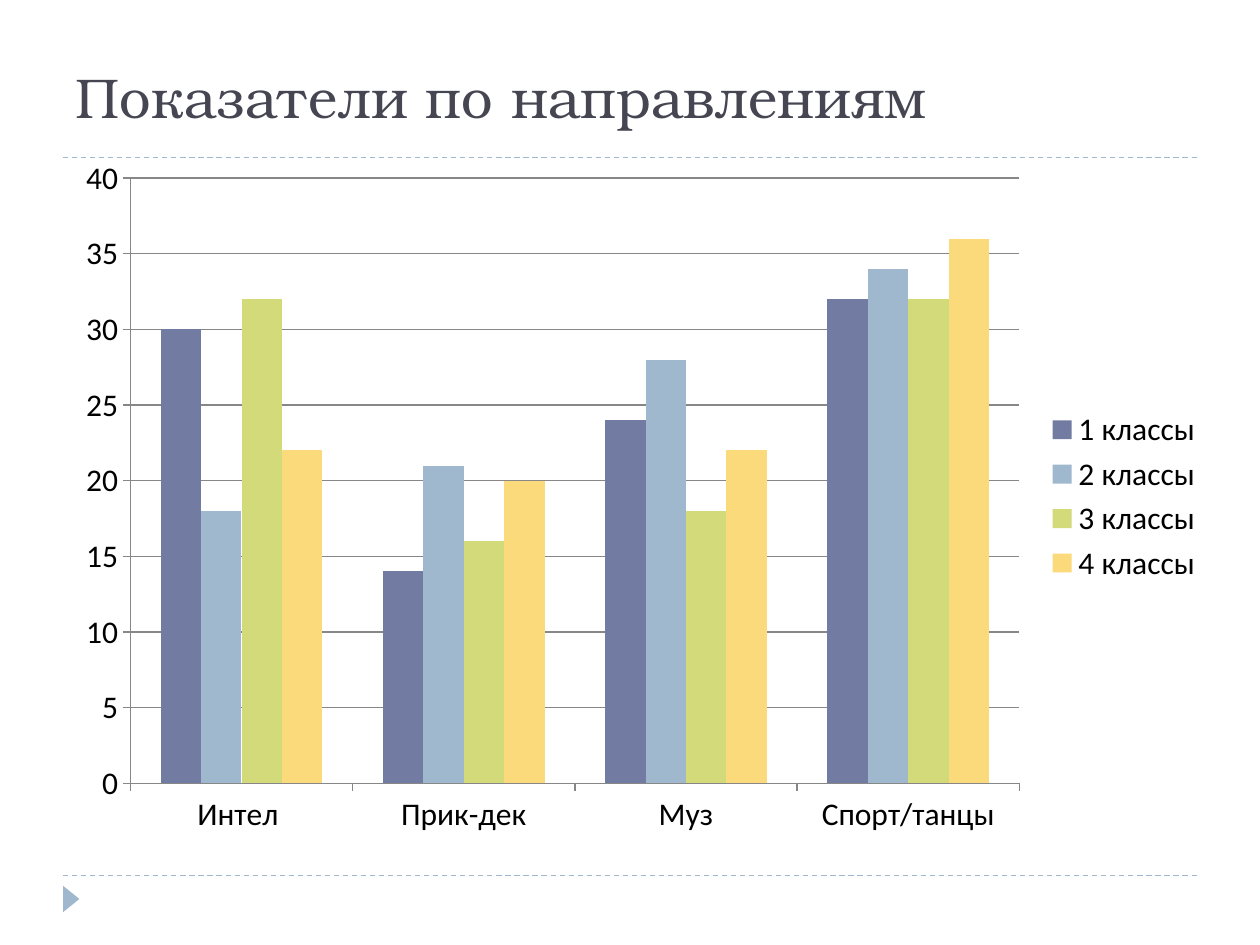
from dataclasses import dataclass

from lxml import etree
from pptx import Presentation
from pptx.chart.data import CategoryChartData
from pptx.dml.color import RGBColor
from pptx.enum import chart as ch, dml, shapes, text
from pptx.oxml.ns import qn
from pptx.slide import Slide
from pptx.util import Inches, Pt


@dataclass(frozen=True)
class Theme:
    ink: str = "464653"
    black: str = "000000"
    sky: str = "9FB8CD"
    grid: str = "878787"
    head: str = "TeX Gyre Bonum"
    body: str = "Calibri"
    big: int = 32
    base: int = 18
    thin: float = 0.75


@dataclass(frozen=True)
class Series:
    name: str
    color: str
    vals: tuple[int, ...]


@dataclass(frozen=True)
class Box:
    left: float
    top: float
    width: float
    height: float

    def place(self) -> list[int]:
        return [Inches(v) for v in (self.left, self.top, self.width, self.height)]


THEME = Theme()
CATS = ("Интел ", "Прик-дек", "Муз", "Спорт/танцы")
SERIES = (
    Series("1 классы", "727CA3", (30, 14, 24, 32)),
    Series("2 классы", THEME.sky, (18, 21, 28, 34)),
    Series("3 классы", "D2DA7A", (32, 16, 18, 32)),
    Series("4 классы", "FADA7A", (22, 20, 22, 36)),
)
RULES = (1.25, 6.95)


def style(font, name: str, size: int, color: str) -> None:
    for key, val in {"name": name, "size": Pt(size), "bold": False}.items():
        setattr(font, key, val)
    font.color.rgb = RGBColor.from_string(color)


def stroke(line, color: str) -> None:
    line.color.rgb = RGBColor.from_string(color)
    line.width = Pt(THEME.thin)


def paint(fill, color: str) -> None:
    fill.solid()
    fill.fore_color.rgb = RGBColor.from_string(color)


def rule(slide: Slide, y: float) -> None:
    """Draw a dashed line between the slide margins."""
    line = slide.shapes.add_connector(
        shapes.MSO_CONNECTOR.STRAIGHT, Inches(0.5), Inches(y), Inches(9.5), Inches(y))
    stroke(line.line, THEME.sky)
    line.line.dash_style = dml.MSO_LINE.DASH
    etree.SubElement(line._element.spPr, qn("a:effectLst"))


def marker(slide: Slide, box: Box) -> None:
    """Draw the small footer triangle that points right."""
    mark = slide.shapes.add_shape(
        shapes.MSO_SHAPE.ISOSCELES_TRIANGLE, *box.place())
    mark.rotation = 90
    mark.shadow.inherit = False
    paint(mark.fill, THEME.sky)
    mark.line.fill.background()


def title(slide: Slide, words: str, box: Box) -> None:
    frame = slide.shapes.add_textbox(*box.place()).text_frame
    for key, val in {"word_wrap": True,
                     "vertical_anchor": text.MSO_ANCHOR.BOTTOM}.items():
        setattr(frame, key, val)
    run = frame.paragraphs[0].add_run()
    run.text = words
    style(run.font, THEME.head, THEME.big, THEME.ink)


def bars(slide: Slide, box: Box) -> None:
    data = CategoryChartData()
    data.categories = CATS
    for item in SERIES:
        data.add_series(item.name, item.vals)
    chart = slide.shapes.add_chart(
        ch.XL_CHART_TYPE.COLUMN_CLUSTERED, *box.place(), data).chart
    style(chart.font, THEME.body, THEME.base, THEME.black)
    chart.has_title = False
    chart.has_legend = True
    chart.legend.position = ch.XL_LEGEND_POSITION.RIGHT
    chart.legend.include_in_layout = False

    plot = chart.plots[0]
    for key, val in {"gap_width": 150, "overlap": 0,
                     "vary_by_categories": False}.items():
        setattr(plot, key, val)
    for bar, item in zip(plot.series, SERIES):
        paint(bar.format.fill, item.color)

    for axis in (chart.category_axis, chart.value_axis):
        axis.major_tick_mark = ch.XL_TICK_MARK.OUTSIDE
        stroke(axis.format.line, THEME.grid)
    ticks = chart.value_axis
    for key, val in {"minimum_scale": 0, "maximum_scale": 40, "major_unit": 5,
                     "has_major_gridlines": True}.items():
        setattr(ticks, key, val)
    stroke(ticks.major_gridlines.format.line, THEME.grid)


def main() -> None:
    deck = Presentation()
    deck.slide_width, deck.slide_height = Inches(10), Inches(7.5)
    slide = deck.slides.add_slide(deck.slide_layouts[6])
    for y in RULES:
        rule(slide, y)
    marker(slide, Box(0.46, 7.07, 0.21, 0.13))
    title(slide, "Показатели по направлениям", Box(0.5, 0.17, 9, 0.91))
    bars(slide, Box(0.5, 1.15, 9.15, 5.58))
    deck.save("out.pptx")


if __name__ == "__main__":
    main()
